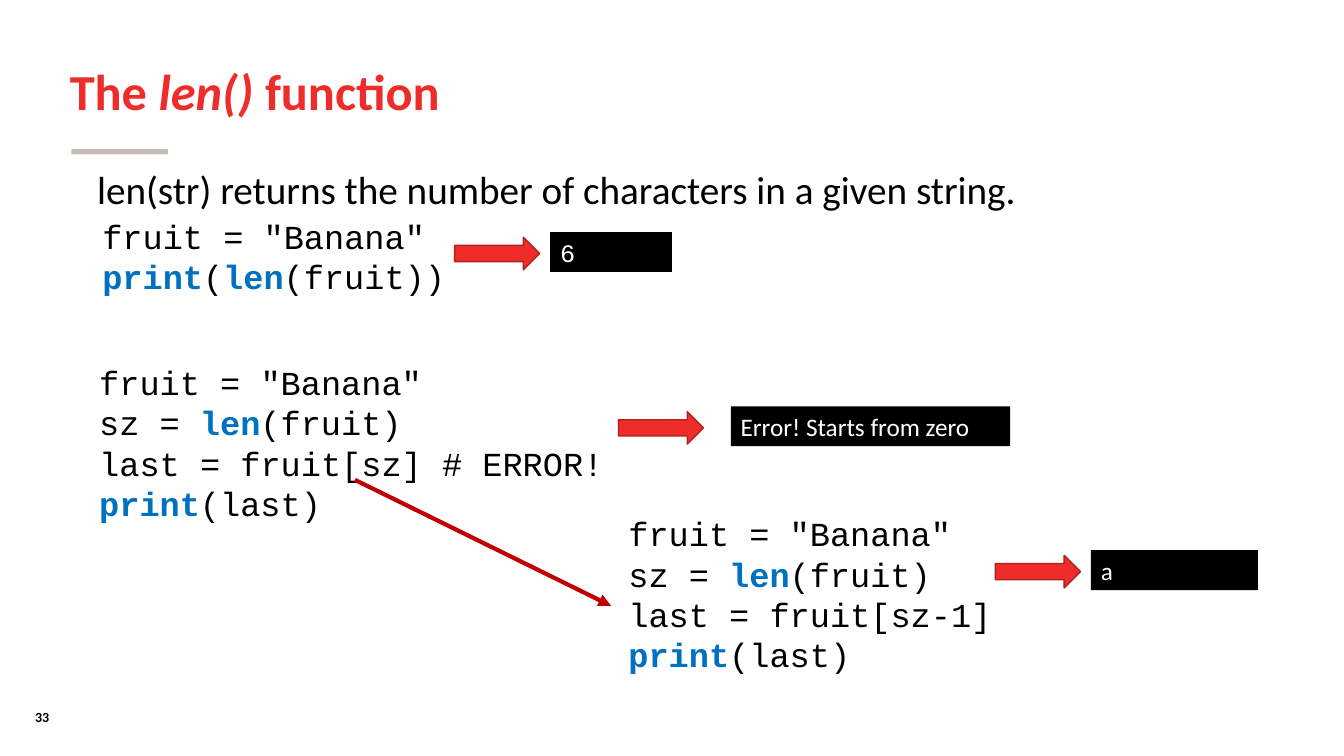
from lxml import etree
from pptx import Presentation
from pptx.dml.color import RGBColor
from pptx.enum.shapes import MSO_CONNECTOR, MSO_SHAPE
from pptx.enum.text import MSO_ANCHOR, PP_ALIGN
from pptx.oxml.ns import qn
from pptx.util import Emu, Pt

RECTANGLE = MSO_SHAPE.RECTANGLE
RIGHT_ARROW = MSO_SHAPE.RIGHT_ARROW
STRAIGHT = MSO_CONNECTOR.STRAIGHT
TOP, MIDDLE = MSO_ANCHOR.TOP, MSO_ANCHOR.MIDDLE
LEFT = PP_ALIGN.LEFT

EMU_PER_PX = 9525
SANS, MONO = "Calibri", "Courier New"
RED, DARK_RED, LINK_RED = "EE2C2A", "B0211F", "C00000"
BLACK, WHITE, BLUE, GREY = "000000", "FFFFFF", "0070C0", "C3BFB6"


def px(length):
    return Emu(length * EMU_PER_PX)


def rgb(value):
    return RGBColor.from_string(value)


class SlideBuilder:
    formats = {
        "title": {"name": SANS, "size": Pt(36), "bold": True, "color": RED},
        "sentence": {"name": SANS, "size": Pt(28), "color": BLACK},
        "code": {"name": MONO, "size": Pt(24), "color": BLACK},
        "code output": {"name": MONO, "size": Pt(18), "color": WHITE},
        "output": {"name": SANS, "size": Pt(18), "color": WHITE},
        "number": {"name": SANS, "size": Pt(10), "bold": True, "color": BLACK},
    }
    emphasis = {
        "title": {"italic": True},
        "code": {"bold": True, "color": BLUE},
    }

    def __init__(self, slide):
        self.slide = slide

    def style_font(self, font, values):
        for key, value in values.items():
            if key == "color":
                font.color.rgb = rgb(value)
            else:
                setattr(font, key, value)

    def fill_text(self, shape, lines, style, anchor=TOP, spacing=None):
        """Write one paragraph per line; parts between bars get the emphasis."""
        frame = shape.text_frame
        frame.word_wrap = True
        frame.vertical_anchor = anchor
        for index, line in enumerate(lines):
            paragraph = frame.add_paragraph() if index else frame.paragraphs[0]
            paragraph.alignment = LEFT
            paragraph.line_spacing = spacing
            for position, part in enumerate(line.split("|")):
                if not part:
                    continue
                run = paragraph.add_run()
                run.text = part
                self.style_font(run.font, self.formats[style])
                if position % 2:
                    self.style_font(run.font, self.emphasis[style])

    def text(self, box, lines, style, **layout):
        textbox = self.slide.shapes.add_textbox(*map(px, box))
        self.fill_text(textbox, lines, style, **layout)

    def shape(self, kind, box, fill, outline=None):
        shape = self.slide.shapes.add_shape(kind, *map(px, box))
        shape.shadow.inherit = False
        shape.fill.solid()
        shape.fill.fore_color.rgb = rgb(fill)
        if outline:
            shape.line.color.rgb = rgb(outline)
            shape.line.width = Pt(1)
        else:
            shape.line.fill.background()
        return shape

    def result(self, arrow_left, left, top, width, output, style):
        """Place a block arrow and the black console box it points to."""
        self.shape(RIGHT_ARROW, (arrow_left, top + 5, 81, 31), RED, DARK_RED)
        console = self.shape(RECTANGLE, (left, top, width, 38), BLACK)
        self.fill_text(console, [output], style)

    def link(self, start, end):
        link = self.slide.shapes.add_connector(STRAIGHT, *map(px, start + end))
        link.line.color.rgb = rgb(LINK_RED)
        link.line.width = Pt(3)
        properties = link.line._get_or_add_ln()
        etree.SubElement(properties, qn("a:tailEnd"), type="triangle")
        etree.SubElement(link._element.spPr, qn("a:effectLst"))


def program(index):
    return ['fruit = "Banana"', "sz = |len|(fruit)",
            f"last = fruit[{index}", "|print|(last)"]


def main():
    deck = Presentation()
    deck.slide_width, deck.slide_height = px(1280), px(720)
    page = SlideBuilder(deck.slides.add_slide(deck.slide_layouts[6]))

    page.text((24, 670, 109, 26), ["33"], "number")
    page.shape(RECTANGLE, (68, 142, 92, 5), GREY)
    page.text((57, 38, 1079, 104), ["The |len()| function"], "title",
              anchor=MIDDLE, spacing=0.9)

    page.text((88, 201, 353, 87),
              ['fruit = "Banana"', "|print|(|len|(fruit))"], "code")
    page.result(433, 524, 221, 116, "6", "code output")

    page.text((85, 340, 678, 165), program("sz] # ERROR!"), "code")
    page.result(589, 696, 387, 266, "Error! Starts from zero", "output")

    page.text((589, 484, 372, 165), program("sz-1]"), "code")
    page.result(948, 1039, 524, 159, "a", "output")

    page.link((338, 457), (582, 577))
    page.text((83, 153, 1110, 55),
              ["len(str) returns the number of characters in a given string."],
              "sentence")
    deck.save("out.pptx")


if __name__ == "__main__":
    main()
